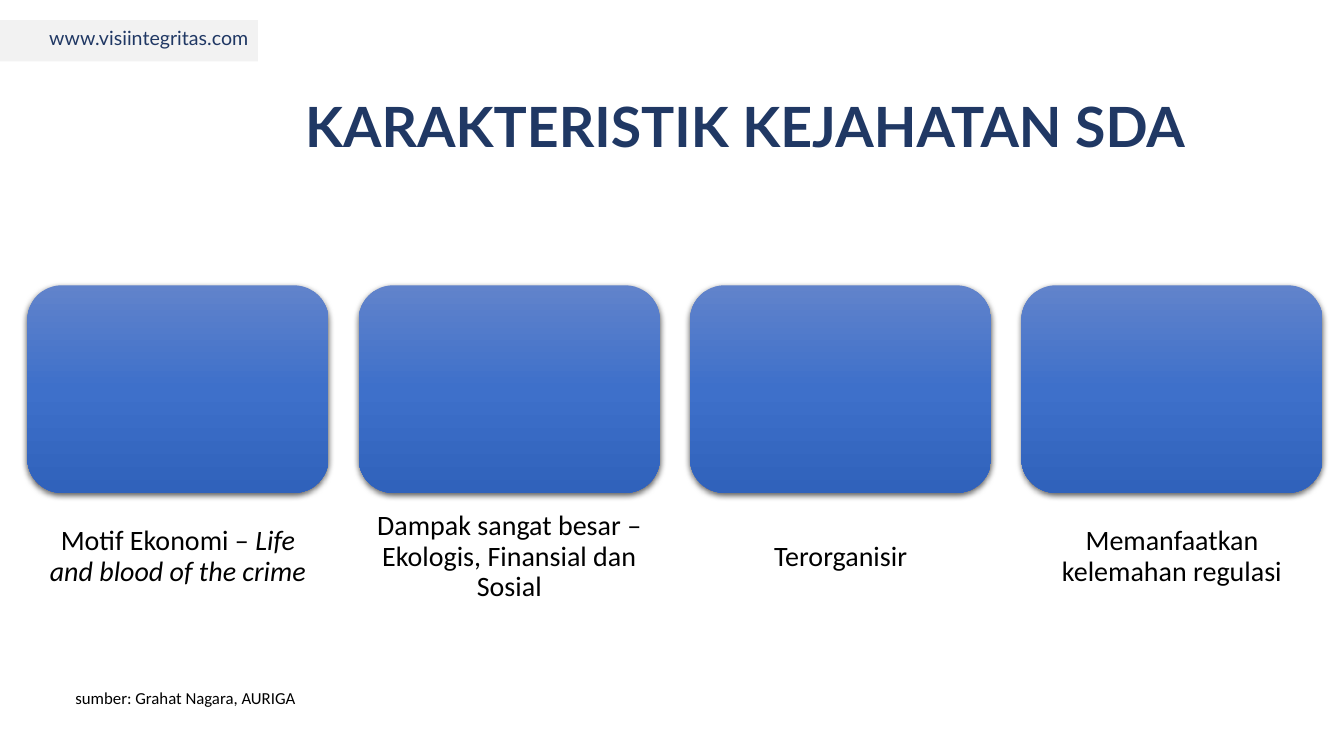
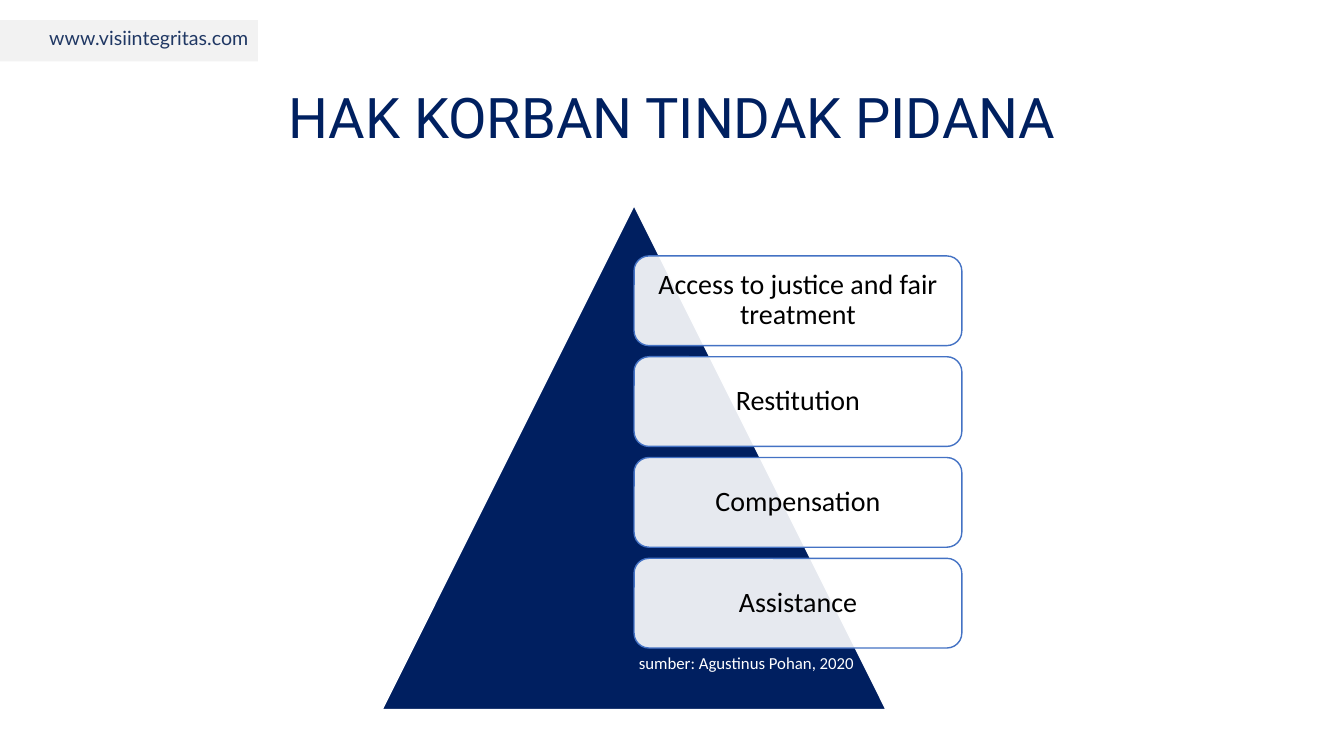
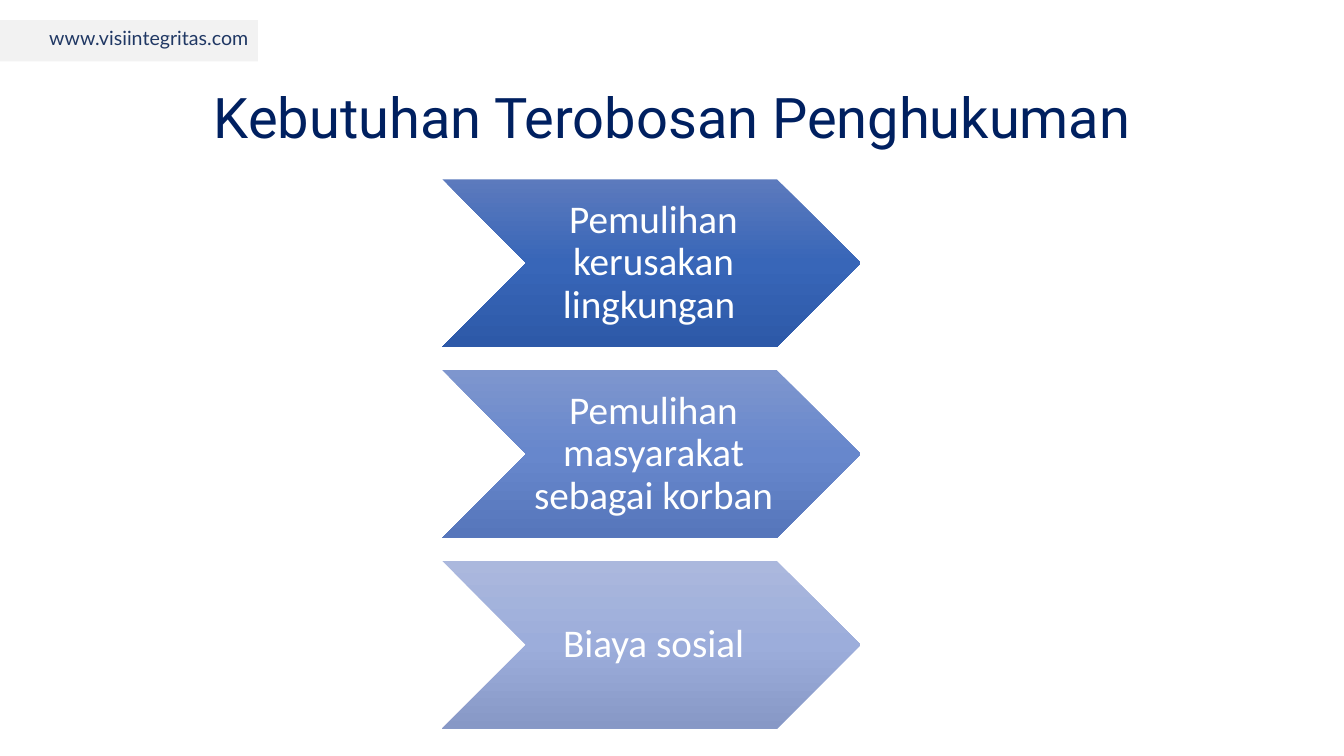
import pptx
import pptx.dml.color
import pptx.enum.shapes
import pptx.enum.text
import pptx.oxml
import pptx.oxml.ns
import pptx.util
from pptx.util import Cm

SHAPE = pptx.enum.shapes.MSO_SHAPE
ALIGN = pptx.enum.text.PP_ALIGN
ANCHOR = pptx.enum.text.MSO_ANCHOR
DRAWING_NS = pptx.oxml.ns.nsdecls("a")

# Content: a label is a list of (text, italic) runs
SITE = "www.visiintegritas.com"

CRIME_TITLE = "KARAKTERISTIK KEJAHATAN SDA"
CRIME_TRAITS = [
    [("Motif Ekonomi – ", False), ("Life and blood of the crime", True)],
    [("Dampak sangat besar – Ekologis, Finansial dan Sosial", False)],
    [("Terorganisir", False)],
    [("Memanfaatkan kelemahan regulasi", False)],
]
CRIME_SOURCE = "sumber: Grahat Nagara, AURIGA"

RIGHTS_TITLE = "HAK KORBAN TINDAK PIDANA"
RIGHTS = ["Access to justice and fair treatment", "Restitution",
          "Compensation", "Assistance"]
RIGHTS_SOURCE = "sumber: Agustinus Pohan, 2020"

NEEDS_TITLE = "Kebutuhan Terobosan Penghukuman"
NEEDS = [
    ("Pemulihan kerusakan lingkungan ", ("5C7ABD", "3866B8", "2D59A8")),
    ("Pemulihan masyarakat sebagai korban", ("7E96CE", "6787CC", "5676BB")),
    ("Biaya sosial", ("ABB8DD", "9CADDB", "8798C6")),
]

# Shared colours
WHITE, BLACK = "FFFFFF", "000000"
NAVY, HEADING_BLUE, PYRAMID_BLUE = "203864", "002060", "001F60"
BAND_GREY, OUTLINE_BLUE = "F2F2F2", "4472C4"
CARD_GRADIENT = ("6183CB", "3E70CA", "3062BB")


def rgb(code):
    return pptx.dml.color.RGBColor.from_string(code)


def write(holder, runs, size, color, font="Calibri", bold=None, align=ALIGN.LEFT,
          anchor=ANCHOR.TOP, spacing=None, insets=(0.25, 0.13, 0.25, 0.13)):
    """Fill one paragraph; insets are left, top, right, bottom in cm."""
    frame = holder.text_frame
    frame.word_wrap = True
    frame.vertical_anchor = anchor
    (frame.margin_left, frame.margin_top,
     frame.margin_right, frame.margin_bottom) = map(Cm, insets)
    paragraph = frame.paragraphs[0]
    paragraph.alignment = align
    if spacing:
        paragraph.line_spacing = spacing
    for text, italic in [(runs, False)] if isinstance(runs, str) else runs:
        run = paragraph.add_run()
        run.text = text
        if italic:
            run.font.italic = True
    paragraph.font.name = font
    paragraph.font.size = pptx.util.Pt(size)
    paragraph.font.bold = bold
    paragraph.font.color.rgb = rgb(color)


def text_box(slide, box, runs, size, color, **style):
    holder = slide.shapes.add_textbox(*map(Cm, box))
    write(holder, runs, size, color, **style)
    return holder


def centred(holder, runs, size, color, insets):
    write(holder, runs, size, color, align=ALIGN.CENTER, anchor=ANCHOR.MIDDLE,
          spacing=0.9, insets=insets)


def panel(slide, kind, box, fill, outline=None):
    """Draw a shape; fill is one colour or a top-to-bottom gradient."""
    shape = slide.shapes.add_shape(kind, *map(Cm, box))
    shape.shadow.inherit = False
    if isinstance(fill, str):
        shape.fill.solid()
        shape.fill.fore_color.rgb = rgb(fill)
    else:
        shape.fill.gradient()
        shape.fill.gradient_angle = 270
        stops = next(shape.element.iter(pptx.oxml.ns.qn("a:gsLst")))
        for stop in list(stops):
            stops.remove(stop)
        for position, color in zip((0, 50000, 100000), fill):
            stops.append(pptx.oxml.parse_xml(
                f'<a:gs {DRAWING_NS} pos="{position}"><a:srgbClr val="{color}"/></a:gs>'))
    if outline:
        shape.line.color.rgb = rgb(outline)
        shape.line.width = pptx.util.Pt(1)
    else:
        shape.line.fill.background()
    return shape


def soften(shape):
    effects = next(shape.element.iter(pptx.oxml.ns.qn("a:effectLst")))
    effects.append(pptx.oxml.parse_xml(
        f'<a:outerShdw {DRAWING_NS} blurRad="57150" dist="19050" dir="5400000" '
        'algn="ctr" rotWithShape="0"><a:srgbClr val="000000">'
        '<a:alpha val="63000"/></a:srgbClr></a:outerShdw>'))


def see_through(shape, opacity):
    color = next(shape.element.iter(pptx.oxml.ns.qn("a:srgbClr")))
    color.append(pptx.oxml.parse_xml(
        f'<a:alpha {DRAWING_NS} val="{opacity * 1000}"/>'))


def brand_layout(slide, layout):
    """Place the site band on the layout, so every slide inherits it."""
    for placeholder in list(layout.placeholders):
        layout.shapes.element.remove(placeholder.element)
    band = panel(slide, SHAPE.RECTANGLE, (0, 0.51, 6.5, 1.04), BAND_GREY)
    site = text_box(slide, (0.99, 0.53, 5.79, 0.86), SITE, 14, NAVY, font="Lato")
    for part in (band, site):
        layout.shapes.element.append(part.element)


def heading(slide, text):
    text_box(slide, (1.52, 1.96, 30.84, 1.96), text, 40, HEADING_BLUE,
             font="Roboto", align=ALIGN.CENTER)


def source_note(slide, left, top, text, color):
    text_box(slide, (left, top, 7.34, 0.76), text, 12, color)


def crime_slide(slide):
    text_box(slide, (7.44, 2.39, 22.99, 2.62), CRIME_TITLE, 39.6, NAVY,
             font="Lato", bold=True, spacing=0.9)
    top, width, height = 7.19, 7.59, 5.28 - 0.05
    for index, trait in enumerate(CRIME_TRAITS):
        left = 0.69 + index * 8.35
        soften(panel(slide, SHAPE.ROUNDED_RECTANGLE, (left, top, width, height),
                     CARD_GRADIENT))
        label = slide.shapes.add_textbox(
            *map(Cm, (left, top + height, width, 2.82)))
        centred(label, trait, 20, BLACK, (0.41, 0.41, 0.41, 0))
    source_note(slide, 1.65, 17.2, CRIME_SOURCE, BLACK)


def rights_slide(slide):
    panel(slide, SHAPE.ISOSCELES_TRIANGLE, (9.63, 5.18, 12.7, 12.7),
          PYRAMID_BLUE, WHITE)
    for index, right in enumerate(RIGHTS):
        step = panel(slide, SHAPE.ROUNDED_RECTANGLE,
                     (15.98, 6.45 + index * 2.54, 8.26, 2.26), WHITE, OUTLINE_BLUE)
        see_through(step, 90)
        centred(step, right, 20, BLACK, (0.2, 0.2, 0.2, 0.2))
    heading(slide, RIGHTS_TITLE)
    source_note(slide, 15.85, 16.33, RIGHTS_SOURCE, WHITE)


def needs_slide(slide):
    for index, (need, gradient) in enumerate(NEEDS):
        chevron = panel(slide, SHAPE.CHEVRON,
                        (11.15, 4.52 + index * 4.81, 10.54, 4.22), gradient)
        centred(chevron, need, 28, WHITE, (0.1, 0.05, 0, 0.05))
    heading(slide, NEEDS_TITLE)


def main():
    deck = pptx.Presentation()
    deck.slide_width, deck.slide_height = Cm(33.87), Cm(19.05)
    blank = deck.slide_layouts[6]
    slides = [deck.slides.add_slide(blank) for _ in range(3)]
    brand_layout(slides[0], blank)
    for build, slide in zip((crime_slide, rights_slide, needs_slide), slides):
        build(slide)
    deck.save("out.pptx")


if __name__ == "__main__":
    main()
